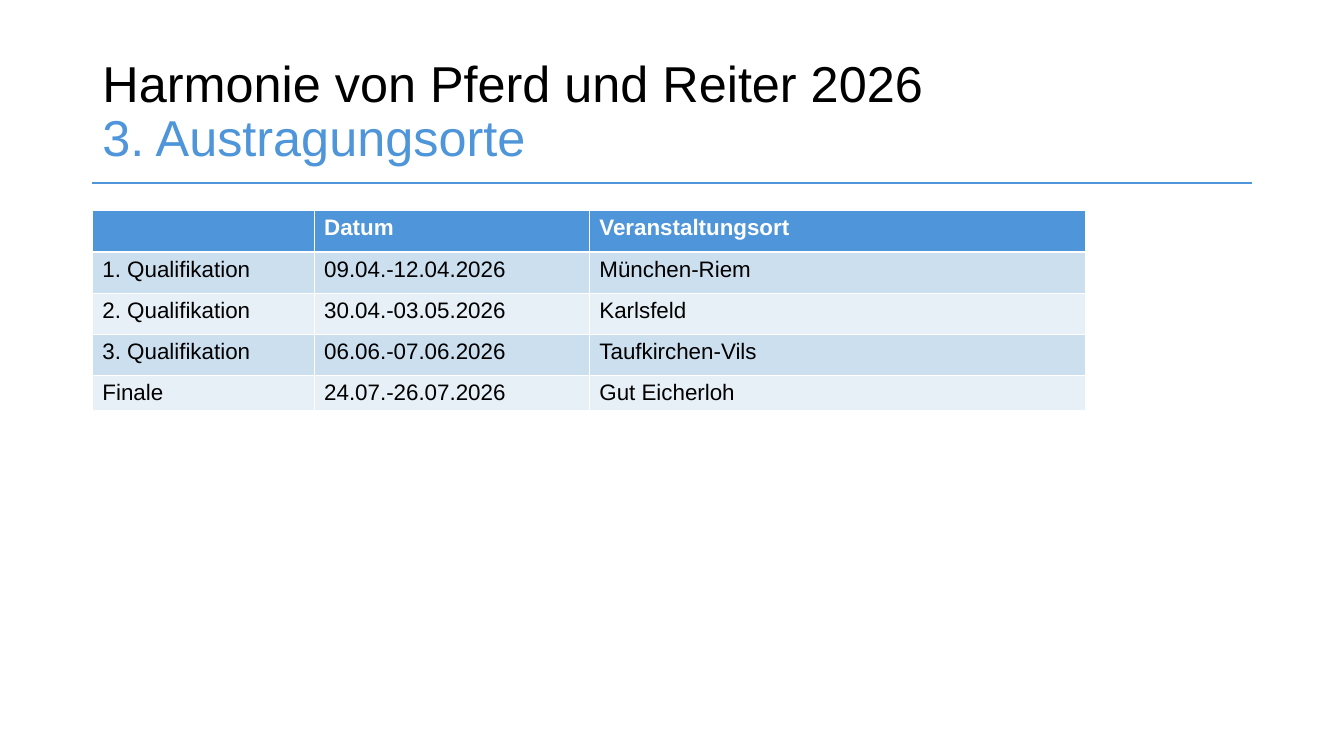
from pptx import Presentation
from pptx.dml.color import RGBColor
from pptx.enum.shapes import MSO_CONNECTOR
from pptx.enum.text import MSO_ANCHOR, MSO_AUTO_SIZE, PP_ALIGN
from pptx.oxml.ns import qn
from pptx.util import Pt

COLORS = {
    "black": "000000",
    "white": "FFFFFF",
    "blue": "4E95D9",
    "odd": "CCDFEF",
    "even": "E7F0F7",
}
LEFT = 66
WIDTHS = [158.4, 196.6, 354.2]
HEIGHTS = [29.5, 29.5, 29.5, 29.5, 25.2]
VENUES = [
    ["", "Datum", "Veranstaltungsort"],
    ["1. Qualifikation", "09.04.-12.04.2026", "München-Riem"],
    ["2. Qualifikation", "30.04.-03.05.2026", "Karlsfeld"],
    ["3. Qualifikation", "06.06.-07.06.2026", "Taufkirchen-Vils"],
    ["Finale", "24.07.-26.07.2026", "Gut Eicherloh"],
]


def color(name):
    return RGBColor.from_string(COLORS[name])


def add_run(para, text, size, tint, bold=False):
    run = para.add_run()
    run.text = text
    run.font.name = "Arial"
    run.font.size = Pt(size)
    run.font.bold = bold
    run.font.color.rgb = color(tint)


def add_title(slide, first, second):
    title = slide.shapes.title
    title.left, title.top = Pt(LEFT), Pt(28.75)
    title.width, title.height = Pt(828), Pt(104.4)
    frame = title.text_frame
    frame.word_wrap = True
    frame.auto_size = MSO_AUTO_SIZE.NONE
    frame.vertical_anchor = MSO_ANCHOR.MIDDLE
    para = frame.paragraphs[0]
    para.alignment = PP_ALIGN.LEFT
    para.line_spacing = 0.9
    add_run(para, first, 36, "black")
    para.add_line_break()
    add_run(para, second, 36, "blue")


def add_grid(slide, rows, top):
    # The default table style draws the white borders
    table = slide.shapes.add_table(
        len(rows), len(WIDTHS), Pt(LEFT), Pt(top),
        Pt(sum(WIDTHS)), Pt(sum(HEIGHTS))).table
    for col, width in zip(table.columns, WIDTHS):
        col.width = Pt(width)
    for i, texts in enumerate(rows):
        table.rows[i].height = Pt(HEIGHTS[i])
        head = i == 0
        fill = "blue" if head else "odd" if i % 2 else "even"
        for j, text in enumerate(texts):
            cell = table.cell(i, j)
            cell.fill.solid()
            cell.fill.fore_color.rgb = color(fill)
            para = cell.text_frame.paragraphs[0]
            if text:
                add_run(para, text, 16, "white" if head else "black", head)
            else:
                para.font.size = Pt(16)


def add_rule(slide, top, width):
    rule = slide.shapes.add_connector(
        MSO_CONNECTOR.STRAIGHT, Pt(LEFT), Pt(top), Pt(LEFT + width), Pt(top))
    rule.line.color.rgb = color("blue")
    rule.line.width = Pt(1.5)
    props = rule._element.spPr
    props.append(props.makeelement(qn("a:effectLst"), {}))


def main():
    deck = Presentation()
    deck.slide_width, deck.slide_height = Pt(960), Pt(540)
    slide = deck.slides.add_slide(deck.slide_layouts[5])

    # Heading, venue table and dividing line
    add_title(slide, "Harmonie von Pferd und Reiter 2026", "3. Austragungsorte")
    add_grid(slide, VENUES, 150.5)
    add_rule(slide, 131, 828)

    deck.save("out.pptx")


if __name__ == "__main__":
    main()
